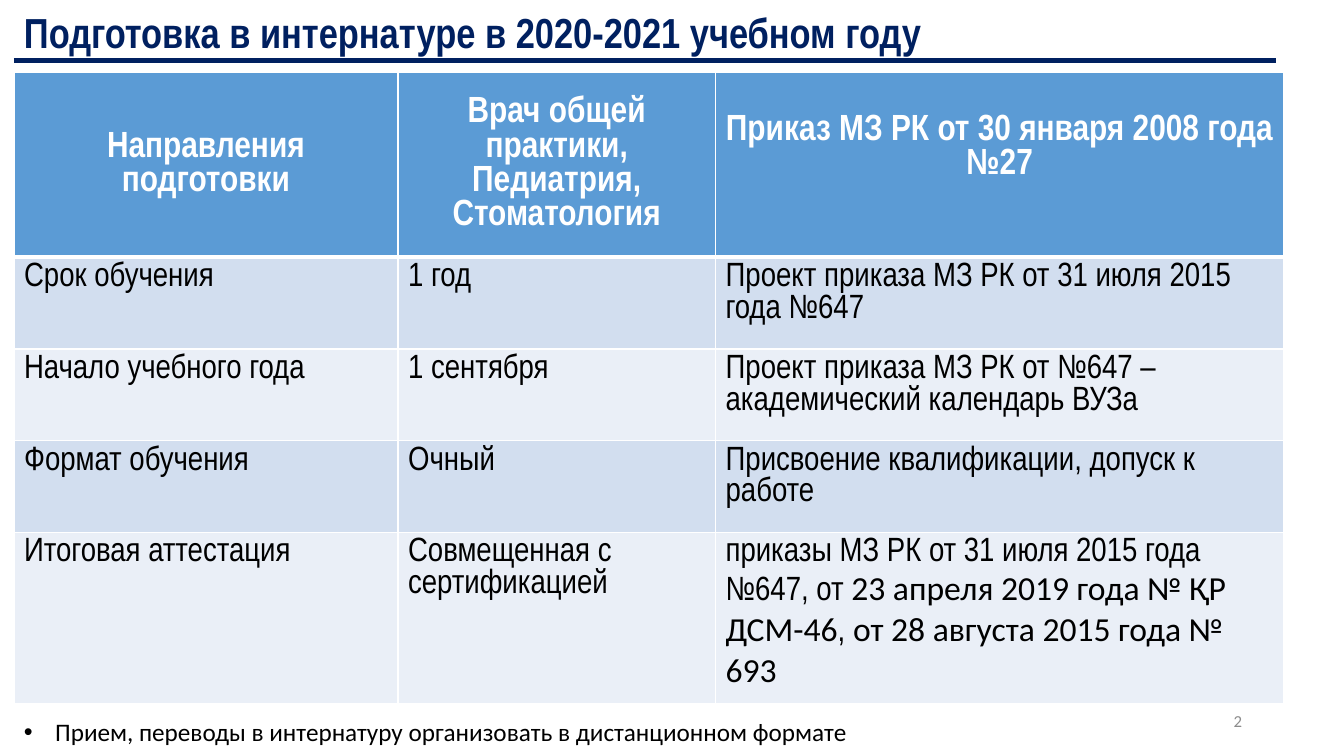
from dataclasses import dataclass
from lxml.etree import SubElement as Sub
from pptx import Presentation
from pptx.dml.color import RGBColor as Rgb
from pptx.enum.shapes import MSO_CONNECTOR as Conn
from pptx.enum.text import MSO_ANCHOR as Anchor, PP_ALIGN as Align
from pptx.oxml import parse_xml
from pptx.oxml.ns import nsdecls, qn
from pptx.util import Inches, Pt


@dataclass(frozen=True)
class Theme:
    """Colours, fonts and type sizes of the slide."""
    navy: str = "002060"
    blue: str = "5B9BD5"
    bands: tuple = ("D2DEEF", "EAEFF7")
    white: str = "FFFFFF"
    black: str = "000000"
    grey: str = "8C8C8C"
    narrow: str = "Arial Narrow"
    plain: str = "Calibri"
    title: int = 30
    head: int = 26
    body: int = 24
    note: int = 18
    page: int = 12


THEME = Theme()
WIDE, HIGH = Inches(13.33), Inches(7.5)
COLS, ROWS = 96, 54
WIDTHS = (27.43, 22.68, 40.61)
HEIGHTS = (13.1, 6.55, 6.55, 6.55, 12.17)
HEAD = ("Направления подготовки",
        "Врач общей практики, Педиатрия, Стоматология",
        "Приказ МЗ РК от 30 января 2008 года №27")
BODY = (
    ("Срок обучения", "1 год",
     "Проект приказа МЗ РК от 31 июля 2015 года №647"),
    ("Начало учебного года", "1 сентября",
     "Проект приказа МЗ РК от №647 – академический календарь ВУЗа"),
    ("Формат обучения", "Очный", "Присвоение квалификации, допуск к работе"),
    ("Итоговая аттестация", "Совмещенная с сертификацией",
     ("приказы МЗ РК от 31 июля 2015 года №647, от ",
      "23 апреля 2019 года № ҚР ДСМ-46", ", ",
      "от 28 августа 2015 года № 693")),
)


def across(cols):
    """Turn grid columns into a length."""
    return int(WIDE * cols / COLS)


def down(rows):
    """Turn grid rows into a length."""
    return int(HIGH * rows / ROWS)


def style(run, face, size, color, bold=False):
    """Format one run."""
    font = run.font
    font.name, font.size, font.bold = face, Pt(size), bold
    font.color.rgb = Rgb.from_string(color)


def add_text(slide, box, text, look, align=Align.LEFT, anchor=Anchor.TOP):
    """Add a text box on the grid and return its paragraph."""
    x, y, w, h = box
    frame = slide.shapes.add_textbox(
        across(x), down(y), across(w), down(h)).text_frame
    frame.word_wrap = True
    frame.vertical_anchor = anchor
    frame.text = text
    para = frame.paragraphs[0]
    para.alignment = align
    style(para.runs[0], *look)
    return para


def add_rule(slide, left, right, y):
    """Add the rule below the title."""
    rule = slide.shapes.add_connector(
        Conn.STRAIGHT, across(left), down(y), across(right), down(y))
    rule.line.color.rgb = Rgb.from_string(THEME.navy)
    rule.line.width = Pt(3)
    Sub(rule._element.spPr, qn("a:effectLst"))


def set_bullet(para):
    """Give a paragraph a hanging bullet."""
    props = para._p.get_or_add_pPr()
    props.set("marL", str(Inches(0.31)))
    props.set("indent", str(-Inches(0.31)))
    Sub(props, qn("a:buFont")).set("typeface", "Arial")
    Sub(props, qn("a:buChar")).set("char", "•")


def paint(cell, color, top, base):
    """Fill a cell and draw its white borders."""
    cell.fill.solid()
    cell.fill.fore_color.rgb = Rgb.from_string(color)
    props = cell._tc.get_or_add_tcPr()
    edges = (("lnL", 1), ("lnR", 1), ("lnT", top), ("lnB", base))
    for spot, (tag, width) in enumerate(edges):
        props.insert(spot, parse_xml(
            f'<a:{tag} {nsdecls("a")} w="{Pt(width)}"><a:solidFill>'
            f'<a:srgbClr val="{THEME.white}"/></a:solidFill></a:{tag}>'))


def fill_head(cell, text):
    """Write a heading cell."""
    paint(cell, THEME.blue, 1, 3)
    cell.text_frame.text = text
    cell.vertical_anchor = Anchor.MIDDLE
    para = cell.text_frame.paragraphs[0]
    para.alignment = Align.CENTER
    style(para.runs[0], THEME.narrow, THEME.head, THEME.white, True)


def fill_body(cell, parts, row):
    """Write a body cell whose parts alternate between two fonts."""
    paint(cell, THEME.bands[(row - 1) % 2], 3 if row == 1 else 1, 1)
    parts = (parts,) if isinstance(parts, str) else parts
    para = cell.text_frame.paragraphs[0]
    for spot, part in enumerate(parts):
        run = para.add_run()
        run.text = part
        face = (THEME.narrow, THEME.plain)[spot % 2]
        style(run, face, THEME.body, THEME.black)


def add_grid(slide, x, y):
    """Add the table of training terms."""
    grid = slide.shapes.add_table(
        len(HEIGHTS), len(WIDTHS), across(x), down(y),
        across(sum(WIDTHS)), down(sum(HEIGHTS))).table
    for col, width in zip(grid.columns, WIDTHS):
        col.width = across(width)
    for row, height in zip(grid.rows, HEIGHTS):
        row.height = down(height)
    for col, text in enumerate(HEAD):
        fill_head(grid.cell(0, col), text)
    grid.cell(0, len(HEAD) - 1).margin_bottom = Inches(0.39)
    for row, line in enumerate(BODY, 1):
        for col, parts in enumerate(line):
            fill_body(grid.cell(row, col), parts, row)


def main():
    """Build and save the slide."""
    deck = Presentation()
    deck.slide_width, deck.slide_height = WIDE, HIGH
    slide = deck.slides.add_slide(deck.slide_layouts[6])
    add_text(slide, (1, 0, 66.4, 4.4),
             "Подготовка в интернатуре в 2020-2021 учебном году",
             (THEME.narrow, THEME.title, THEME.navy, True),
             anchor=Anchor.BOTTOM)
    add_rule(slide, 1, 91.15, 4.32)
    add_text(slide, (67.84, 50.04, 21.6, 2.88), "2",
             (THEME.plain, THEME.page, THEME.grey),
             Align.RIGHT, Anchor.MIDDLE)
    add_grid(slide, 1, 5.18)
    note = add_text(
        slide, (1, 50.83, 91, 2.88),
        "Прием, переводы в интернатуру организовать в дистанционном формате",
        (THEME.plain, THEME.note, THEME.black))
    set_bullet(note)
    deck.save("out.pptx")


if __name__ == "__main__":
    main()
